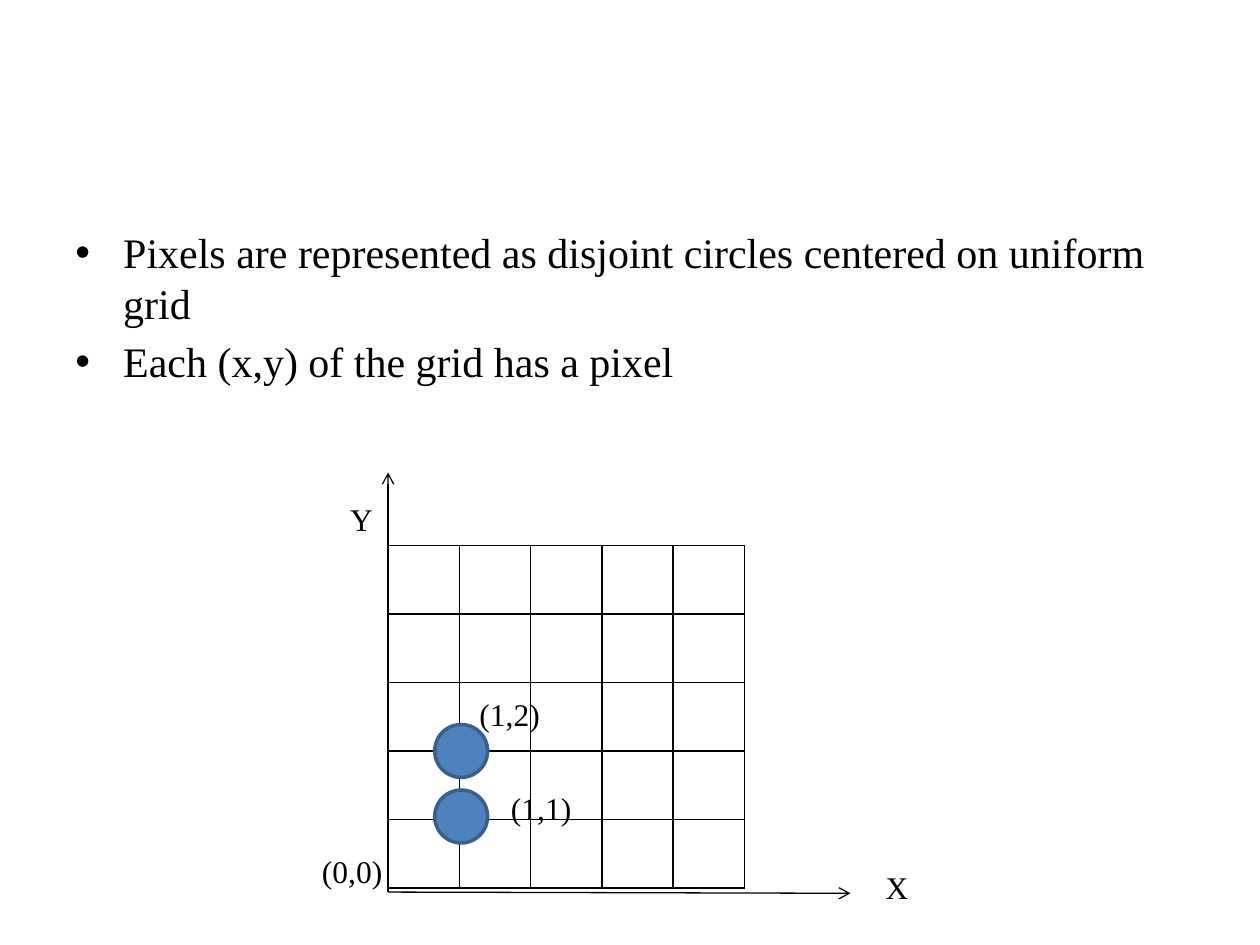
from lxml.etree import SubElement
from pptx import Presentation
from pptx.dml.color import RGBColor
from pptx.enum.shapes import MSO_CONNECTOR, MSO_SHAPE
from pptx.enum.text import MSO_ANCHOR, PP_ALIGN
from pptx.oxml import parse_xml
from pptx.oxml.ns import nsdecls, qn
from pptx.util import Inches, Pt

COLORS = {"ink": "000000", "pixel": "4F81BD", "pixel_edge": "3A5F8C"}
FONT = "Times New Roman"
GRID_SIZE = 5
BULLETS = [
    "Pixels are represented as disjoint circles centered on uniform grid",
    "Each (x,y) of the grid has a pixel",
]
LABELS = [
    ("Y", 2.58, 3.83, 0.58, 0.58),
    ("X", 6.83, 6.75, 0.58, 0.58),
    ("(1,1)", 3.92, 6.25, 0.75, 0.33),
    ("(1,2)", 3.67, 5.5, 0.75, 0.33),
    ("(0,0)", 2.42, 6.75, 0.75, 0.33),
]


def color(name):
    """Return the named colour."""
    return RGBColor.from_string(COLORS[name])


def set_font(paragraph, size):
    """Give a paragraph the slide's typeface and ink."""
    paragraph.font.name = FONT
    paragraph.font.size = Pt(size)
    paragraph.font.color.rgb = color("ink")


def add_bullets(slide, left, top, width, height):
    """Add the bulleted statements in the given box."""
    box = slide.shapes.add_textbox(Inches(left), Inches(top), Inches(width), Inches(height))
    frame = box.text_frame
    frame.word_wrap = True
    for index, text in enumerate(BULLETS):
        paragraph = frame.add_paragraph() if index else frame.paragraphs[0]
        paragraph.text = text
        paragraph.space_before = Pt(4.8)
        set_font(paragraph, 24)
        properties = paragraph._p.get_or_add_pPr()
        properties.set("marL", str(Inches(0.38)))
        properties.set("indent", str(Inches(-0.38)))
        bullet_font = parse_xml(f'<a:buFont {nsdecls("a")} typeface="Arial"/>')
        bullet = parse_xml(f'<a:buChar {nsdecls("a")} char="•"/>')
        spacing = properties.find(qn("a:spcBef"))
        spacing.addnext(bullet_font)
        bullet_font.addnext(bullet)


def add_borders(cell):
    """Draw a thin border on all four sides of a cell."""
    properties = cell._tc.get_or_add_tcPr()
    for index, side in enumerate("LRTB"):
        border = parse_xml(
            f'<a:ln{side} {nsdecls("a")} w="{Pt(1)}"><a:solidFill>'
            f'<a:srgbClr val="{COLORS["ink"]}"/></a:solidFill></a:ln{side}>'
        )
        properties.insert(index, border)


def add_grid(slide, left, top, width, height):
    """Add the uniform grid as an empty table."""
    frame = slide.shapes.add_table(
        GRID_SIZE, GRID_SIZE, Inches(left), Inches(top), Inches(width), Inches(height)
    )
    table = frame.table
    table.first_row = False
    table.horz_banding = False
    for cell in table.iter_cells():
        cell.fill.background()
        add_borders(cell)


def add_axis(slide, start_x, start_y, end_x, end_y):
    """Add an axis with an open arrowhead at its end."""
    axis = slide.shapes.add_connector(
        MSO_CONNECTOR.STRAIGHT, Inches(start_x), Inches(start_y), Inches(end_x), Inches(end_y)
    )
    axis.line.color.rgb = color("ink")
    axis.line.width = Pt(0.75)
    SubElement(axis.line._get_or_add_ln(), qn("a:tailEnd"), type="arrow")
    SubElement(axis._element.spPr, qn("a:effectLst"))


def add_pixel(slide, left, top, size):
    """Add one pixel as a filled circle."""
    pixel = slide.shapes.add_shape(
        MSO_SHAPE.OVAL, Inches(left), Inches(top), Inches(size), Inches(size)
    )
    pixel.shadow.inherit = False
    pixel.fill.solid()
    pixel.fill.fore_color.rgb = color("pixel")
    pixel.line.color.rgb = color("pixel_edge")
    pixel.line.width = Pt(2)


def add_label(slide, text, left, top, width, height):
    """Add a centred label in the given box."""
    box = slide.shapes.add_textbox(Inches(left), Inches(top), Inches(width), Inches(height))
    frame = box.text_frame
    frame.word_wrap = True
    frame.vertical_anchor = MSO_ANCHOR.MIDDLE
    paragraph = frame.paragraphs[0]
    paragraph.text = text
    paragraph.alignment = PP_ALIGN.CENTER
    set_font(paragraph, 18)


def add_diagram(slide, left, top, width, height):
    """Add the grid with its axes, pixels and labels."""
    base = top + height + 0.03
    add_grid(slide, left, top, width, height)
    add_axis(slide, left, base, left + 3.67, base + 0.01)
    add_axis(slide, left, base, left, base - 3.33)
    for pixel_top in (5.75, 6.27):
        add_pixel(slide, 3.45, pixel_top, 0.42)
    for label in LABELS:
        add_label(slide, *label)


def main():
    """Build and save the slide."""
    presentation = Presentation()
    presentation.slide_width = Inches(10)
    presentation.slide_height = Inches(7.5)
    slide = presentation.slides.add_slide(presentation.slide_layouts[6])
    add_bullets(slide, 0.5, 1.75, 9, 4.95)
    add_diagram(slide, 3.08, 4.33, 2.83, 2.72)
    presentation.save("out.pptx")


if __name__ == "__main__":
    main()
